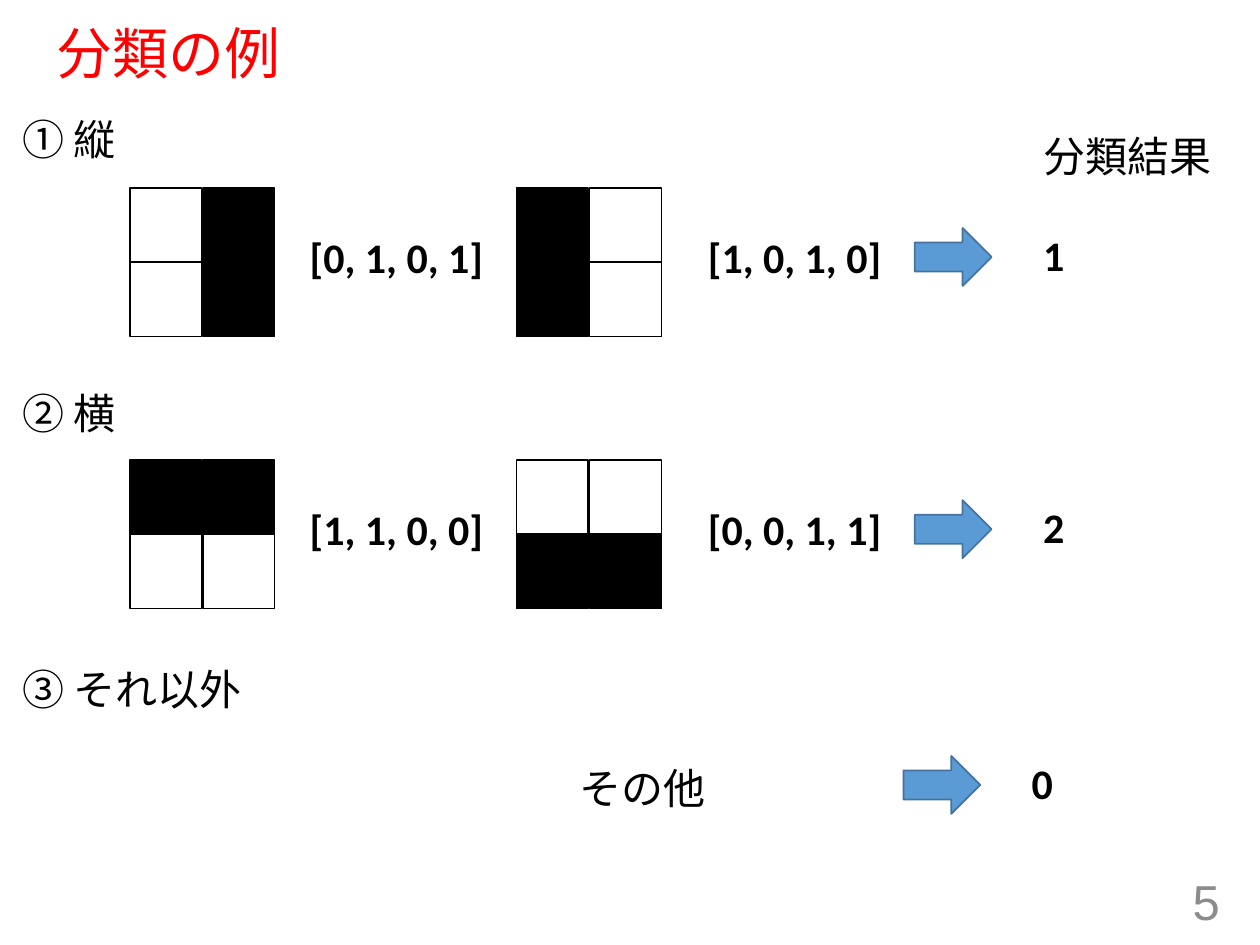
from pptx import Presentation
from pptx.dml.color import RGBColor
from pptx.enum.shapes import MSO_SHAPE
from pptx.enum.text import MSO_ANCHOR, MSO_AUTO_SIZE, PP_ALIGN
from pptx.util import Inches, Pt

BLACK = RGBColor(0x00, 0x00, 0x00)
RED = RGBColor(0xFF, 0x00, 0x00)
GRAY = RGBColor(0x8C, 0x8C, 0x8C)
BLUE = RGBColor(0x5B, 0x9B, 0xD5)
DARK_BLUE = RGBColor(0x43, 0x73, 0x9E)

CELL_WIDTH, CELL_HEIGHT = 0.57, 0.59
COLUMN_STEP, ROW_STEP = 0.58, 0.59


class SlideBuilder:
    """Holds the page and draws its elements; lengths are in inches."""

    def __init__(self, page):
        self.page = page

    def text_box(self, text, left, top, width, height, size, color, font, bold=False):
        box = self.page.shapes.add_textbox(
            Inches(left), Inches(top), Inches(width), Inches(height))
        para = box.text_frame.paragraphs[0]
        span = para.add_run()
        span.text = text
        span.font.name = font
        span.font.size = Pt(size)
        span.font.bold = bold
        span.font.color.rgb = color
        return box.text_frame, para

    def framed_text(self, text, left, top, width, height, size, color):
        frame, para = self.text_box(text, left, top, width, height, size, color, "Arial")
        frame.word_wrap = True
        frame.vertical_anchor = MSO_ANCHOR.MIDDLE
        return para

    def label(self, text, left, top, width, bold=False):
        frame, _ = self.text_box(text, left, top, width, 0.5, 24, BLACK, "Calibri", bold)
        frame.word_wrap = False
        frame.auto_size = MSO_AUTO_SIZE.SHAPE_TO_FIT_TEXT

    def shape(self, kind, left, top, width, height, fill, line):
        shape = self.page.shapes.add_shape(
            kind, Inches(left), Inches(top), Inches(width), Inches(height))
        shape.shadow.inherit = False
        if fill is None:
            shape.fill.background()
        else:
            shape.fill.solid()
            shape.fill.fore_color.rgb = fill
        shape.line.color.rgb = line
        shape.line.width = Pt(1)

    def pattern(self, bits, left, top):
        """Draws a 2 x 2 grid in which each 1 is a black cell."""
        for index, bit in enumerate(bits):
            row, column = divmod(index, 2)
            self.shape(MSO_SHAPE.RECTANGLE, left + column * COLUMN_STEP,
                       top + row * ROW_STEP, CELL_WIDTH, CELL_HEIGHT,
                       BLACK if bit else None, BLACK)

    def result(self, value, left, top):
        """Draws an arrow and the class number it leads to."""
        self.shape(MSO_SHAPE.RIGHT_ARROW, left, top, 0.61, 0.46, BLUE, DARK_BLUE)
        self.label(str(value), left + 0.92, top - 0.04, 0.37, bold=True)


def main():
    deck = Presentation()
    deck.slide_width, deck.slide_height = Inches(10), Inches(7.5)
    builder = SlideBuilder(deck.slides.add_slide(deck.slide_layouts[6]))

    # Title and page number
    title = builder.framed_text("分類の例", 0.35, 0.19, 9.25, 0.51, 32, RED)
    title.line_spacing = 0.9
    number = builder.framed_text("5", 7.53, 6.95, 2.25, 0.4, 28, GRAY)
    number.alignment = PP_ALIGN.RIGHT

    # Headings
    builder.label("分類結果", 8.18, 0.99, 1.55)
    headings = [("① 縦", 0.85, 0.95), ("② 横", 3.03, 0.95), ("③ それ以外", 5.22, 1.96)]
    for text, top, width in headings:
        builder.label(text, 0.08, top, width)

    # Vertical and horizontal patterns with their vectors and classes
    groups = [
        (1, 1.49, ([0, 1, 0, 1], [1, 0, 1, 0])),
        (2, 3.65, ([1, 1, 0, 0], [0, 0, 1, 1])),
    ]
    for value, top, vectors in groups:
        for bits, grid_left, vector_left in zip(vectors, (1.03, 4.1), (2.36, 5.52)):
            builder.pattern(bits, grid_left, top)
            builder.label(str(bits), vector_left, top + 0.3, 1.59, bold=True)
        builder.result(value, 7.26, top + 0.32)

    # Everything else
    builder.label("その他", 4.5, 6, 1.21)
    builder.result(0, 7.17, 6)

    deck.save("out.pptx")


if __name__ == "__main__":
    main()
